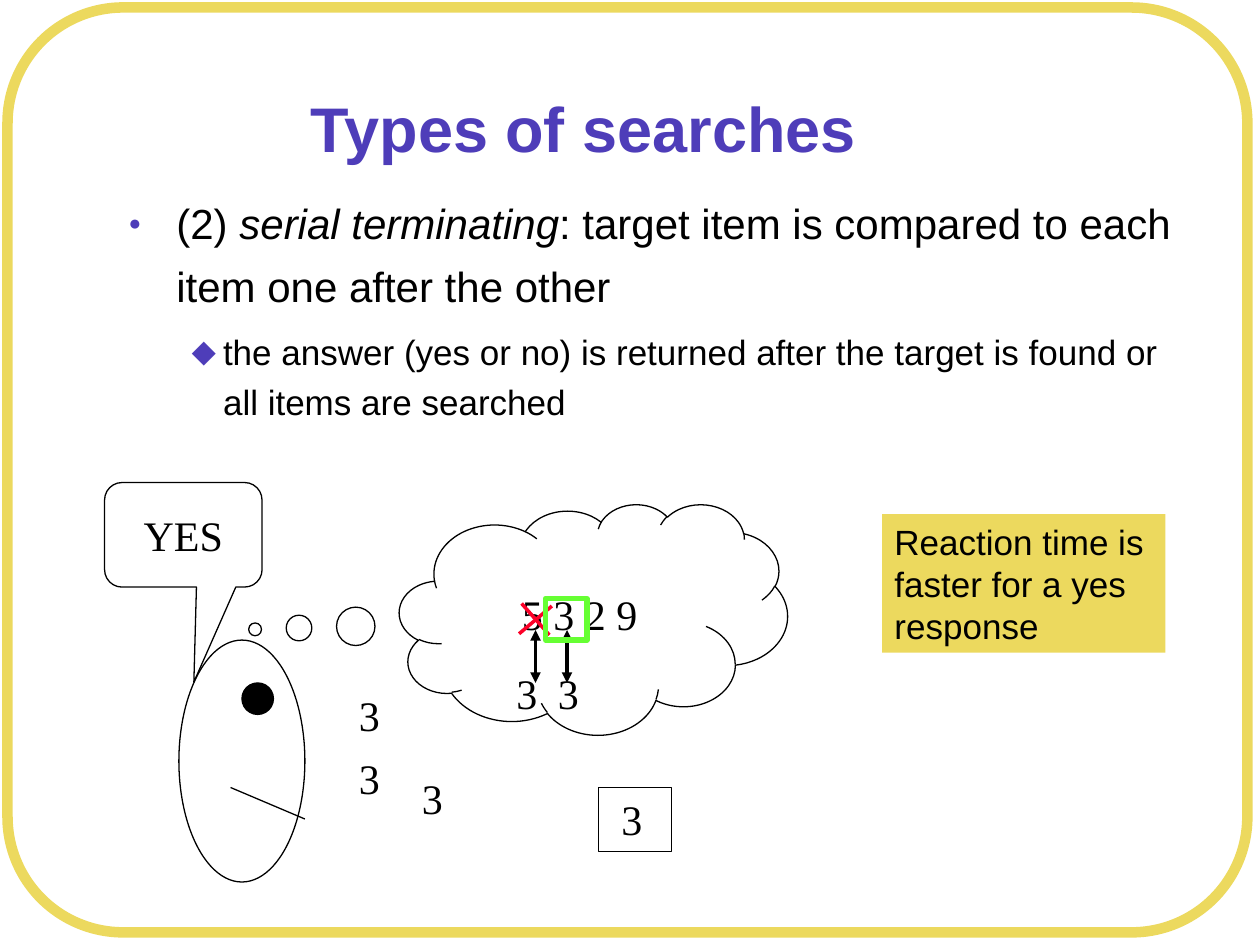
from dataclasses import dataclass

from lxml.etree import SubElement
from pptx import Presentation
from pptx.dml.color import RGBColor
from pptx.enum.shapes import MSO_CONNECTOR, MSO_SHAPE as Preset
from pptx.enum.text import MSO_ANCHOR as Anchor, MSO_AUTO_SIZE as AutoSize, PP_ALIGN as Align
from pptx.oxml.ns import qn
from pptx.util import Inches, Pt

BLACK, YELLOW, PURPLE, RED, GREEN = "000000", "ECD95E", "4E3DB9", "FC0128", "66FF33"
SANS, SERIF = "Arial", "Times New Roman"


@dataclass
class Area:
    left: float
    top: float
    width: float
    height: float

    def lengths(self) -> list:
        return [Inches(n) for n in (self.left, self.top, self.width, self.height)]


@dataclass
class Outline:
    preset: Preset
    area: Area
    line: str | None = BLACK
    weight: float = 0.75
    fill: str | None = None
    adjustments: tuple = ()


@dataclass
class Stroke:
    start: tuple
    end: tuple
    color: str = BLACK
    weight: float = 2
    arrows: bool = False


@dataclass
class Bullet:
    level: int
    symbol: str
    scale: int
    margin: float
    hanging: float
    spacing: float
    before: float
    size: float
    spans: list


def rgb(color: str) -> RGBColor:
    return RGBColor.from_string(color)


def add_span(para, text: str, font: str, size: float, color: str = BLACK,
             bold: bool = False, italic: bool = False) -> None:
    span = para.add_run()
    span.text = text
    span.font.name, span.font.size = font, Pt(size)
    span.font.bold, span.font.italic = bold, italic
    span.font.color.rgb = rgb(color)


def write(shape, text: str, font: str = SERIF, size: float = 24,
          centered: bool = False, wrap: bool = False) -> None:
    frame = shape.text_frame
    frame.word_wrap = wrap
    frame.vertical_anchor = Anchor.MIDDLE if centered else Anchor.TOP
    para = frame.paragraphs[0]
    para.alignment = Align.CENTER if centered else Align.LEFT
    add_span(para, text, font, size)


def draw_outline(page, outline: Outline):
    shape = page.shapes.add_shape(outline.preset, *outline.area.lengths())
    shape.shadow.inherit = False
    for index, value in enumerate(outline.adjustments):
        shape.adjustments[index] = value
    if outline.fill:
        shape.fill.solid()
        shape.fill.fore_color.rgb = rgb(outline.fill)
    else:
        shape.fill.background()
    if outline.line:
        shape.line.color.rgb = rgb(outline.line)
        shape.line.width = Pt(outline.weight)
    else:
        shape.line.fill.background()
    return shape


def draw_stroke(page, stroke: Stroke) -> None:
    ends = [Inches(n) for n in stroke.start + stroke.end]
    connector = page.shapes.add_connector(MSO_CONNECTOR.STRAIGHT, *ends)
    connector.line.color.rgb = rgb(stroke.color)
    connector.line.width = Pt(stroke.weight)
    if stroke.arrows:
        for end in ("a:headEnd", "a:tailEnd"):
            SubElement(connector.line._get_or_add_ln(), qn(end), type="triangle")
    SubElement(connector._element.spPr, qn("a:effectLst"))


def draw_digit(page, left: float, top: float) -> None:
    box = page.shapes.add_textbox(*Area(left, top, 0.37, 0.5).lengths())
    write(box, "3")


def place(shape, area: Area) -> None:
    shape.left, shape.top, shape.width, shape.height = area.lengths()
    shape.text_frame.auto_size = AutoSize.NONE


def add_bullet(para, bullet: Bullet) -> None:
    para.level = bullet.level
    para.alignment = Align.LEFT
    para.line_spacing = bullet.spacing
    para.space_before = Pt(bullet.before)
    props = para._p.get_or_add_pPr()
    props.set("marL", str(Inches(bullet.margin)))
    props.set("indent", str(-Inches(bullet.hanging)))
    SubElement(SubElement(props, qn("a:buClr")), qn("a:srgbClr"), val=PURPLE)
    SubElement(props, qn("a:buSzPct"), val=str(bullet.scale * 1000))
    SubElement(props, qn("a:buFont"), typeface=SANS)
    SubElement(props, qn("a:buChar"), char=bullet.symbol)
    for text, italic in bullet.spans:
        add_span(para, text, SANS, bullet.size, italic=italic)


def fill_placeholders(page) -> None:
    title, body = page.shapes.title, page.placeholders[1]
    place(title, Area(0.92, 0.42, 7.42, 1.25))
    title.text_frame.vertical_anchor = Anchor.MIDDLE
    heading = title.text_frame.paragraphs[0]
    heading.alignment = Align.CENTER
    heading.line_spacing = 0.9
    add_span(heading, "Types of searches", SANS, 36, PURPLE, bold=True)

    place(body, Area(0.92, 1.42, 8.58, 2.02))
    bullets = [
        Bullet(0, "●", 50, 0.38, 0.38, 1.25, 7, 24, [
            ("(2)", False),
            (" serial terminating", True),
            (": target item is compared to each item one after the other", False),
        ]),
        Bullet(1, "⬥", 100, 0.75, 0.25, 1.2, 6, 20, [
            ("the answer (yes or no) is returned after the target is found "
             "or all items are searched", False),
        ]),
    ]
    frame = body.text_frame
    for index, bullet in enumerate(bullets):
        add_bullet(frame.add_paragraph() if index else frame.paragraphs[0], bullet)


def main() -> None:
    deck = Presentation()
    deck.slide_width, deck.slide_height = Inches(10), Inches(7.5)
    page = deck.slides.add_slide(deck.slide_layouts[1])
    fill_placeholders(page)

    draw_outline(page, Outline(Preset.ROUNDED_RECTANGLE, Area(0.06, 0.06, 9.84, 7.34),
                               YELLOW, 6, adjustments=(0.125,)))
    thought = draw_outline(page, Outline(Preset.CLOUD_CALLOUT, Area(3.17, 4, 3.08, 1.83),
                                         adjustments=(-0.872, 0.044)))
    write(thought, "5 3 2 9", centered=True)

    draw_outline(page, Outline(Preset.OVAL, Area(1.42, 5.08, 1, 1.92)))
    draw_outline(page, Outline(Preset.OVAL, Area(1.92, 5.42, 0.25, 0.25), fill=BLACK))
    draw_stroke(page, Stroke((1.83, 6.25), (2.42, 6.5), weight=0.75))

    target = draw_outline(page, Outline(Preset.RECTANGLE, Area(4.75, 6.25, 0.58, 0.51)))
    write(target, " 3", wrap=True)
    for left, top in [(3.25, 6.08), (2.75, 5.42), (2.75, 5.92), (4, 5.25), (4.33, 5.25)]:
        draw_digit(page, left, top)

    for x in (4.25, 4.5):
        draw_stroke(page, Stroke((x, 5), (x, 5.42), arrows=True))
    draw_stroke(page, Stroke((4.14, 4.79), (4.36, 5.04), RED))
    draw_stroke(page, Stroke((4.12, 5.03), (4.38, 4.81), RED))
    draw_outline(page, Outline(Preset.RECTANGLE, Area(4.33, 4.75, 0.33, 0.33), GREEN, 3))

    answer = draw_outline(page, Outline(Preset.ROUNDED_RECTANGULAR_CALLOUT,
                                        Area(0.83, 3.83, 1.25, 0.83),
                                        adjustments=(0.067, 1.408, 0.167)))
    write(answer, "YES", centered=True)
    remark = draw_outline(page, Outline(Preset.RECTANGLE, Area(7, 4.08, 2.25, 1.1),
                                        line=None, fill=YELLOW))
    write(remark, "Reaction time is faster for a yes response", SANS, 20, wrap=True)

    deck.save("out.pptx")


if __name__ == "__main__":
    main()
